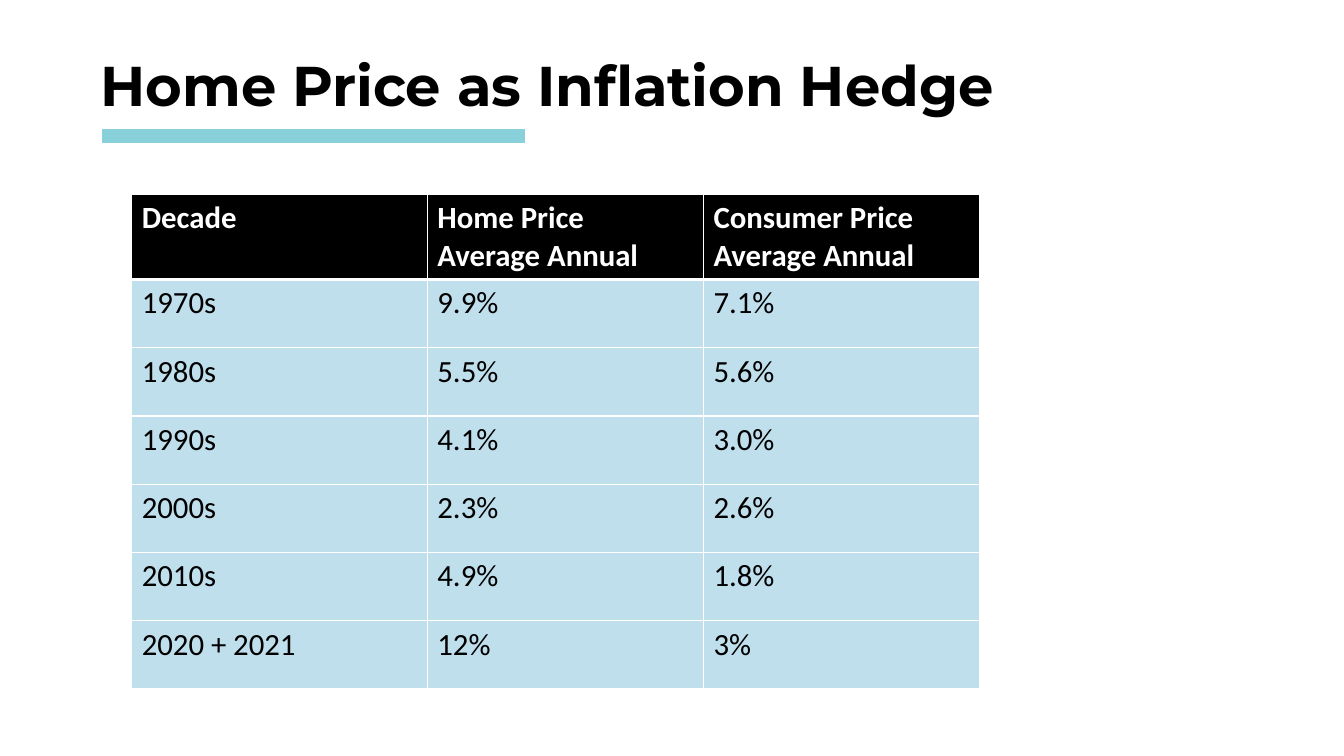
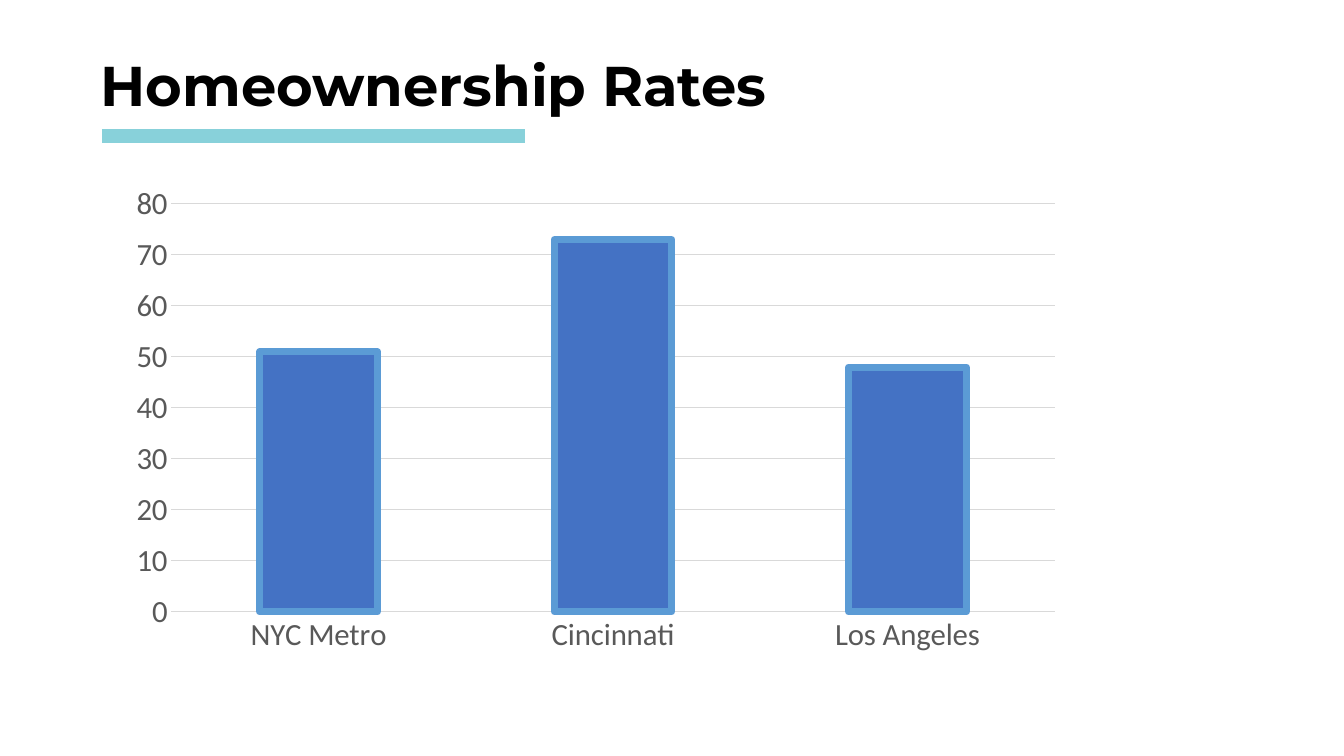
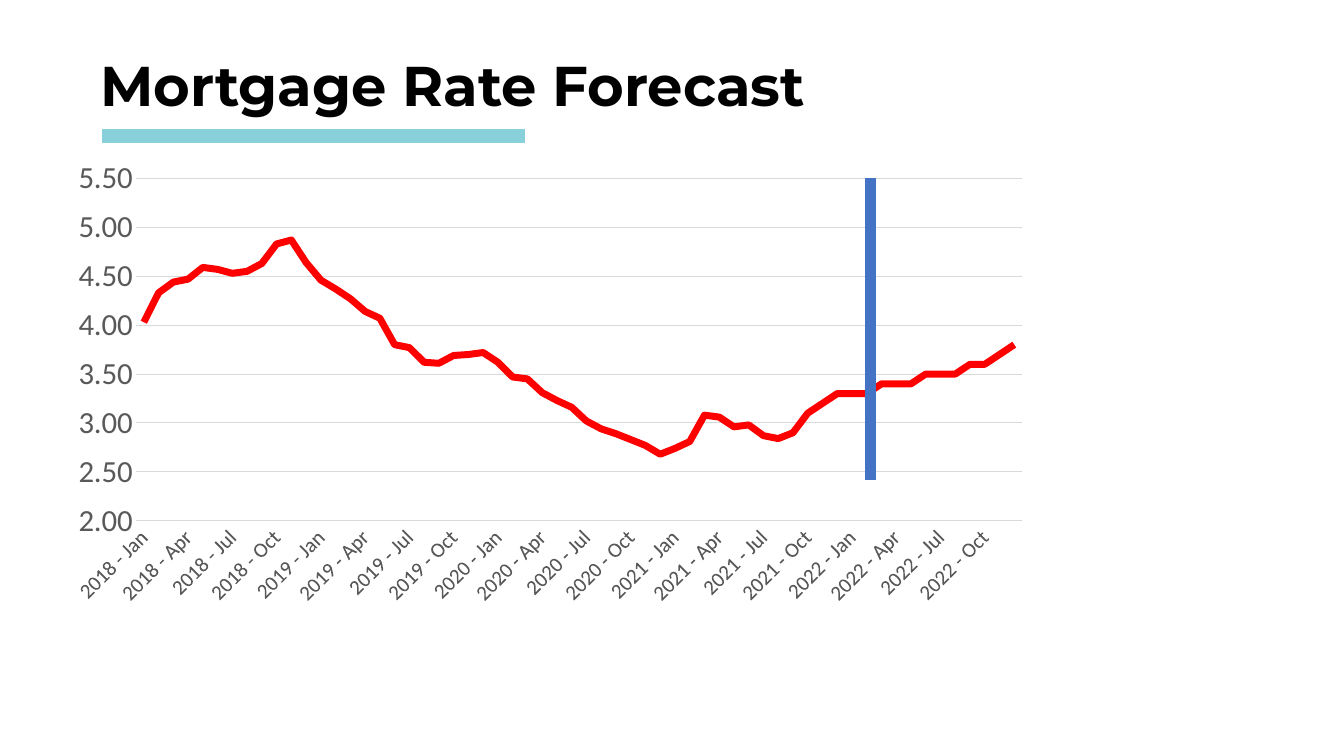
from dataclasses import dataclass
from itertools import product
from typing import Any

from lxml.etree import SubElement
from pptx import Presentation
from pptx.chart.chart import Chart
from pptx.chart.data import CategoryChartData
from pptx.dml.color import RGBColor
from pptx.enum.chart import XL_CHART_TYPE as ChartType, XL_TICK_MARK as TickMark
from pptx.enum.shapes import MSO_CONNECTOR as Connector, PP_PLACEHOLDER as PlaceholderType
from pptx.enum.text import MSO_ANCHOR as Anchor, MSO_AUTO_SIZE as AutoSize, PP_ALIGN as Align
from pptx.oxml import parse_xml
from pptx.oxml.ns import nsdecls, qn
from pptx.util import Cm, Pt

BLACK = RGBColor(0x00, 0x00, 0x00)
WHITE = RGBColor(0xFF, 0xFF, 0xFF)
TEAL = RGBColor(0x88, 0xD1, 0xDA)
PALE_BLUE = RGBColor(0xBF, 0xDF, 0xEC)
BLUE = RGBColor(0x44, 0x72, 0xC4)
LIGHT_BLUE = RGBColor(0x5B, 0x9B, 0xD5)
RED = RGBColor(0xFF, 0x00, 0x00)
GREY = RGBColor(0x59, 0x59, 0x59)
GRID_GREY = RGBColor(0xD9, 0xD9, 0xD9)

TITLE_FONT = {"name": "Montserrat", "size": Pt(40), "bold": True}
TITLE_FRAME = {
    "auto_size": AutoSize.NONE, "word_wrap": True, "vertical_anchor": Anchor.TOP,
    "margin_left": Cm(0.34), "margin_right": Cm(0.34),
    "margin_top": Cm(0.34), "margin_bottom": Cm(0.34),
}
CHART_FONT = {"name": "Calibri", "size": Pt(10)}
AXIS_FONT = {"name": "Calibri", "size": Pt(22), "bold": False}
DATE_FONT = AXIS_FONT | {"size": Pt(15)}
HEADER_FONT = {"name": "Calibri", "size": Pt(22), "bold": True}
BODY_FONT = HEADER_FONT | {"bold": False}
FOOTER_TYPES = (PlaceholderType.DATE, PlaceholderType.FOOTER, PlaceholderType.SLIDE_NUMBER)

DECADES = [
    ("Decade", "Home Price\nAverage Annual", "Consumer Price\nAverage Annual"),
    ("1970s", "9.9%", "7.1%"),
    ("1980s", "5.5%", "5.6%"),
    ("1990s", "4.1%", "3.0%"),
    ("2000s", "2.3%", "2.6%"),
    ("2010s", "4.9%", "1.8%"),
    ("2020 + 2021", "12%", "3%"),
]
COLUMN_WIDTHS = (7.45, 6.96, 6.96)
ROW_HEIGHT = 1.72

MONTHS = "Jan Feb Mar Apr May Jun Jul Aug Sep Oct Nov Dec".split()
RATE_MONTHS = [f"{year} - {month}" for year, month in product(range(2018, 2023), MONTHS)]
MORTGAGE_RATES = [
    4.03, 4.33, 4.44, 4.47, 4.59, 4.57, 4.53, 4.55, 4.63, 4.83, 4.87, 4.64,
    4.46, 4.37, 4.27, 4.14, 4.07, 3.8, 3.77, 3.62, 3.61, 3.69, 3.7, 3.72,
    3.62, 3.47, 3.45, 3.31, 3.23, 3.16, 3.02, 2.94, 2.89, 2.83, 2.77, 2.68,
    2.74, 2.81, 3.08, 3.06, 2.96, 2.98, 2.87, 2.84, 2.9, 3.1, 3.2, 3.3,
    3.3, 3.3, 3.4, 3.4, 3.4, 3.5, 3.5, 3.5, 3.6, 3.6, 3.7, 3.8,
]


@dataclass(frozen=True)
class Box:
    left: float
    top: float
    width: float
    height: float

    def lengths(self) -> tuple:
        return Cm(self.left), Cm(self.top), Cm(self.width), Cm(self.height)


@dataclass(frozen=True)
class Rule:
    start: tuple[float, float]
    end: tuple[float, float]
    color: RGBColor
    weight: float


@dataclass(frozen=True)
class ChartSpec:
    kind: ChartType
    box: Box
    plot: Box  # measured from the corner of the chart
    categories: list[str]
    values: list[float]
    line_color: RGBColor
    category_font: dict
    number_format: str = "General"


TITLE_RULE = Rule((2.57, 3.43), (13.23, 3.43), TEAL, 10)
FORECAST_RULE = Rule((21.94, 12.09), (21.94, 4.48), BLUE, 8)
OWNERSHIP_CHART = ChartSpec(
    ChartType.COLUMN_CLUSTERED, Box(2.36, 3.71, 24.79, 13.74), Box(1.96, 1.43, 22.26, 10.28),
    ["NYC Metro", "Cincinnati", "Los Angeles"], [51, 73, 48], LIGHT_BLUE, AXIS_FONT)
RATE_CHART = ChartSpec(
    ChartType.LINE, Box(1.71, 4.02, 24.05, 11.46), Box(2.07, 0.45, 22.32, 8.65),
    RATE_MONTHS, MORTGAGE_RATES, RED, DATE_FONT, "#,##0.00")


def apply_format(target: Any, values: dict) -> None:
    for name, value in values.items():
        setattr(target, name, value)


def format_font(font: Any, values: dict, color: RGBColor) -> None:
    apply_format(font, values)
    font.color.rgb = color


def format_line(line: Any, color: RGBColor, weight: float) -> None:
    line.color.rgb = color
    line.width = Pt(weight)


def remove_footers(template: Any) -> None:
    for shape in list(template.placeholders):
        if shape.placeholder_format.type in FOOTER_TYPES:
            shape._element.getparent().remove(shape._element)


def add_rule(slide: Any, rule: Rule) -> None:
    points = (Cm(length) for length in (*rule.start, *rule.end))
    connector = slide.shapes.add_connector(Connector.STRAIGHT, *points)
    format_line(connector.line, rule.color, rule.weight)
    SubElement(connector._element.spPr, qn("a:effectLst"))


def add_titled_slide(presentation: Any, title: str, title_width: float) -> Any:
    slide = presentation.slides.add_slide(presentation.slide_layouts[5])
    shape = slide.shapes.title
    box = Box(2.19, 0.94, title_width, 3.56)
    apply_format(shape, dict(zip(("left", "top", "width", "height"), box.lengths())))
    apply_format(shape.text_frame, TITLE_FRAME)
    shape.text_frame.text = title
    paragraph = shape.text_frame.paragraphs[0]
    paragraph.alignment = Align.LEFT
    format_font(paragraph.runs[0].font, TITLE_FONT, BLACK)
    add_rule(slide, TITLE_RULE)
    return slide


def add_borders(cell: Any, bottom: float) -> None:
    properties = cell._tc.get_or_add_tcPr()
    for side, weight in (("L", 1), ("R", 1), ("T", 1), ("B", bottom)):
        properties.append(parse_xml(
            f'<a:ln{side} {nsdecls("a")} w="{Pt(weight)}"><a:solidFill>'
            f'<a:srgbClr val="{WHITE}"/></a:solidFill></a:ln{side}>'))


def add_decade_table(slide: Any) -> None:
    box = Box(3.32, 4.9, sum(COLUMN_WIDTHS), ROW_HEIGHT * len(DECADES))
    table = slide.shapes.add_table(len(DECADES), len(COLUMN_WIDTHS), *box.lengths()).table
    table.horz_banding = False
    for column, width in zip(table.columns, COLUMN_WIDTHS):
        column.width = Cm(width)
    for index, (row, texts) in enumerate(zip(table.rows, DECADES)):
        row.height = Cm(ROW_HEIGHT)
        is_header = index == 0
        for cell, text in zip(row.cells, texts):
            add_borders(cell, bottom=3 if is_header else 1)
            cell.fill.solid()
            cell.fill.fore_color.rgb = BLACK if is_header else PALE_BLUE
            cell.text = text
            for paragraph in cell.text_frame.paragraphs:
                format_font(paragraph.runs[0].font, HEADER_FONT if is_header else BODY_FONT,
                            WHITE if is_header else BLACK)


def place_plot(chart: Chart, box: Box, plot: Box) -> None:
    """Fix the inner plot area, leaving the axis labels outside it."""
    plot_area = chart._chartSpace.chart.plotArea
    for layout in plot_area.findall(qn("c:layout")):
        plot_area.remove(layout)
    plot_area.insert(0, parse_xml(
        f'<c:layout {nsdecls("c")}><c:manualLayout><c:layoutTarget val="inner"/>'
        '<c:xMode val="edge"/><c:yMode val="edge"/>'
        f'<c:x val="{plot.left / box.width}"/><c:y val="{plot.top / box.height}"/>'
        f'<c:w val="{plot.width / box.width}"/><c:h val="{plot.height / box.height}"/>'
        '</c:manualLayout></c:layout>'))


def add_single_series_chart(slide: Any, spec: ChartSpec) -> Chart:
    data = CategoryChartData(number_format=spec.number_format)
    data.categories = spec.categories
    data.add_series("Series 1", spec.values)
    chart = slide.shapes.add_chart(spec.kind, *spec.box.lengths(), data).chart
    apply_format(chart, {"has_legend": False, "has_title": False})
    format_font(chart.font, CHART_FONT, BLACK)
    place_plot(chart, spec.box, spec.plot)

    categories, values = chart.category_axis, chart.value_axis
    for axis, font in ((categories, spec.category_font), (values, AXIS_FONT)):
        apply_format(axis, {"major_tick_mark": TickMark.NONE, "minor_tick_mark": TickMark.NONE})
        format_font(axis.tick_labels.font, font, GREY)
    format_line(categories.format.line, GRID_GREY, 0.75)
    values.format.line.fill.background()
    values.has_major_gridlines = True
    format_line(values.major_gridlines.format.line, GRID_GREY, 0.75)
    apply_format(values.tick_labels, {"number_format": spec.number_format,
                                      "number_format_is_linked": False})

    chart.plots[0].vary_by_categories = False
    format_line(chart.plots[0].series[0].format.line, spec.line_color, 5)
    return chart


def add_ownership_chart(slide: Any) -> None:
    plot = add_single_series_chart(slide, OWNERSHIP_CHART).plots[0]
    plot.gap_width = 150
    fill = plot.series[0].format.fill
    fill.solid()
    fill.fore_color.rgb = BLUE


def add_rate_chart(slide: Any) -> None:
    chart = add_single_series_chart(slide, RATE_CHART)
    chart.plots[0].series[0].smooth = False
    chart.value_axis.minimum_scale = 2
    axis = chart.category_axis._element
    axis.find(qn("c:txPr")).find(qn("a:bodyPr")).set("rot", "-2700000")
    axis.find(qn("c:noMultiLvlLbl")).addprevious(
        parse_xml(f'<c:tickLblSkip {nsdecls("c")} val="3"/>'))


def main() -> None:
    presentation = Presentation()
    apply_format(presentation, {"slide_width": Cm(33.87), "slide_height": Cm(19.05)})
    for template in (presentation.slide_master, *presentation.slide_layouts):
        remove_footers(template)
    add_decade_table(add_titled_slide(presentation, "Home Price as Inflation Hedge", 23.62))
    add_ownership_chart(add_titled_slide(presentation, "Homeownership Rates", 28.65))
    forecast_slide = add_titled_slide(presentation, "Mortgage Rate Forecast", 25.86)
    add_rate_chart(forecast_slide)
    add_rule(forecast_slide, FORECAST_RULE)
    presentation.save("out.pptx")


if __name__ == "__main__":
    main()
